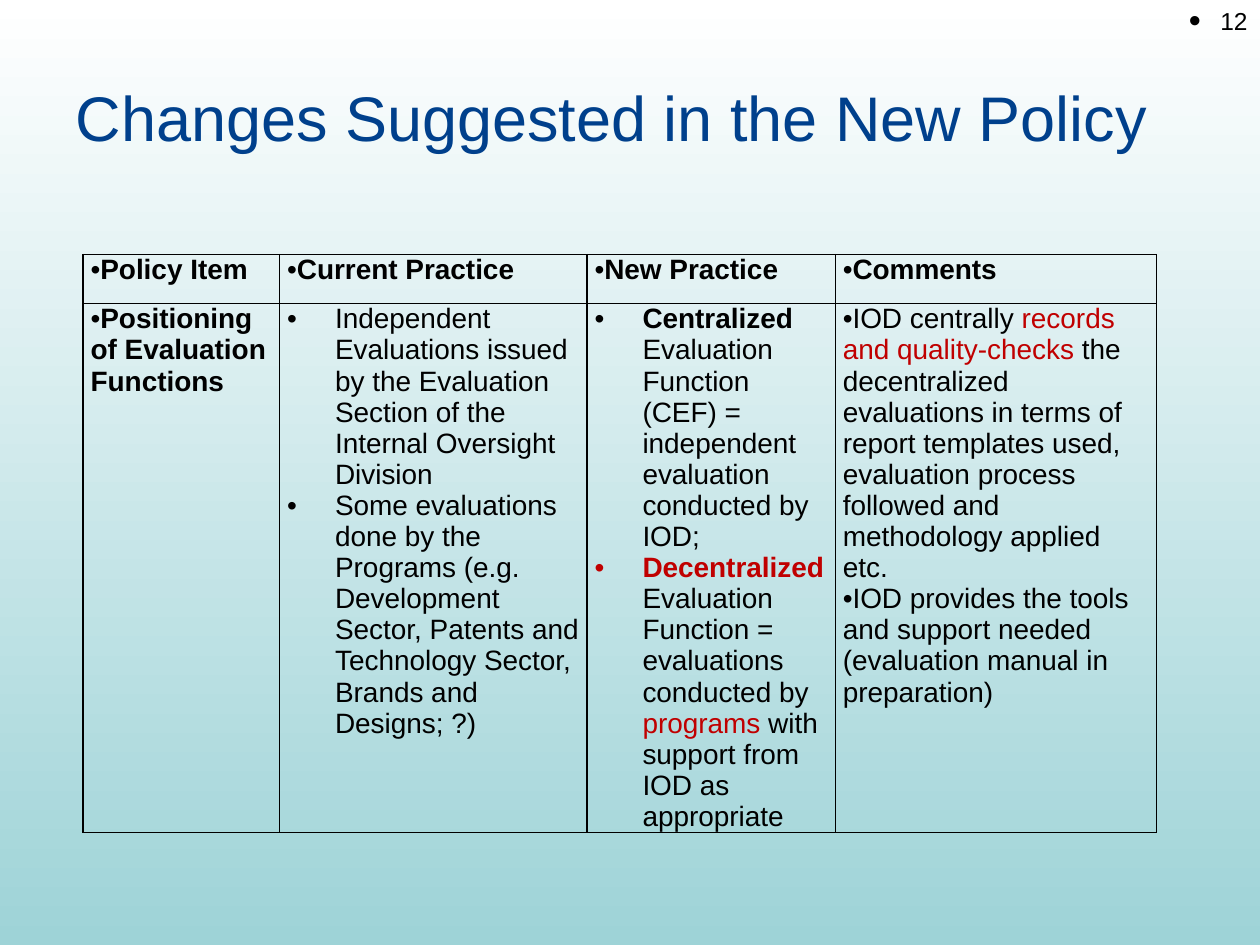
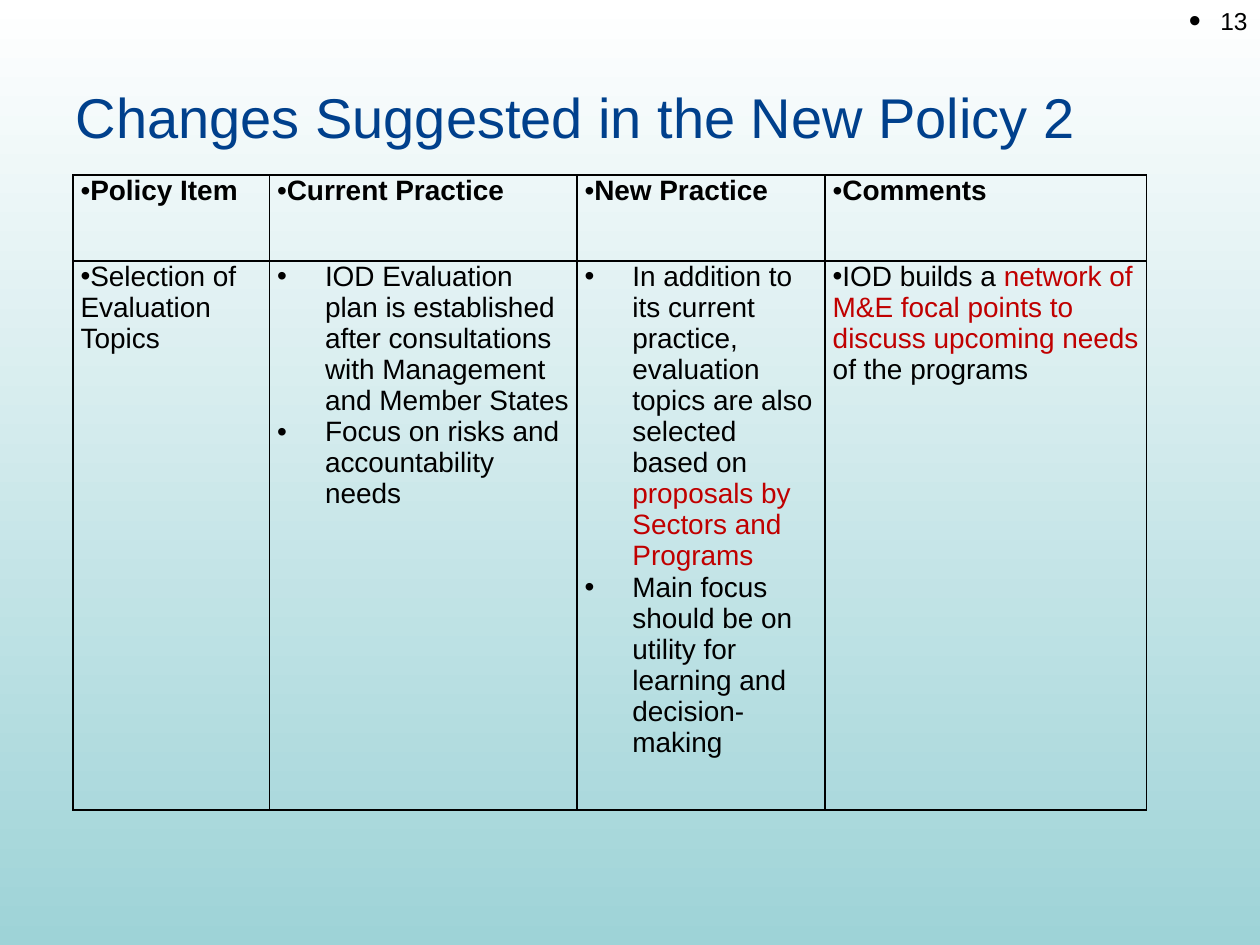
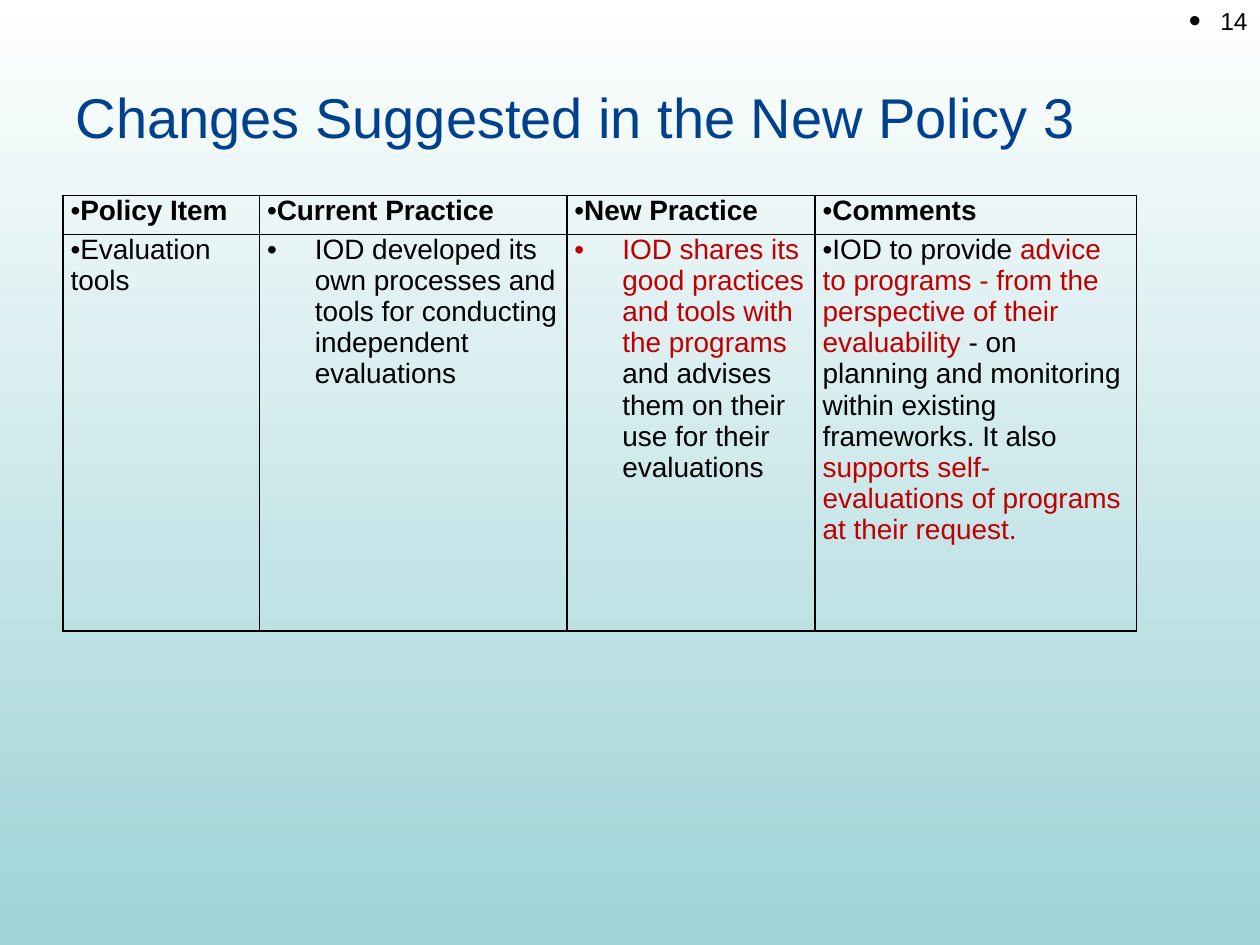
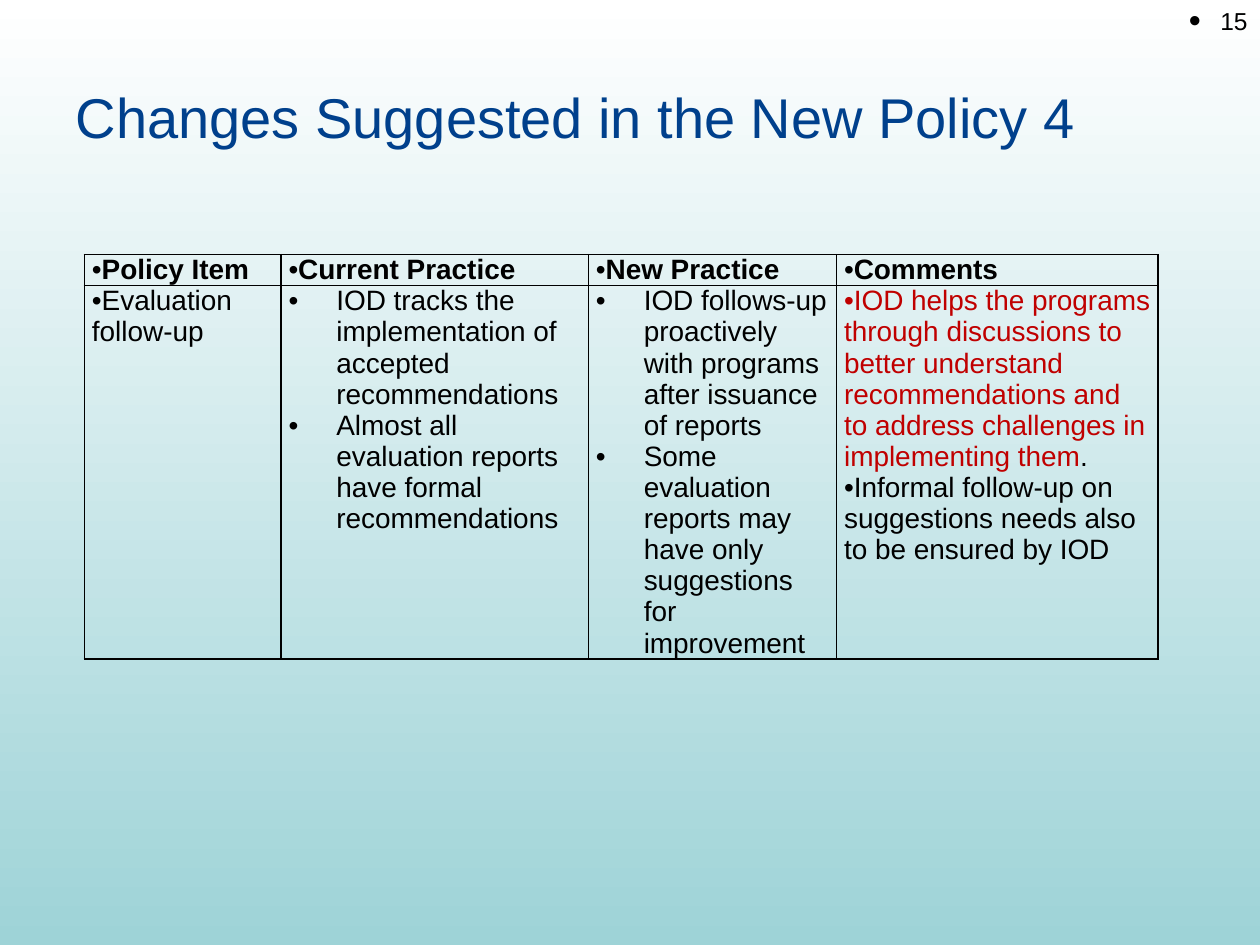
from dataclasses import dataclass

from lxml import etree
from pptx import Presentation
from pptx import util as u
from pptx.dml.color import RGBColor
from pptx.enum import text
from pptx.oxml import ns

# Content: a paragraph is a string or a list of (words, style) pairs
HEADINGS = ["Policy Item", "Current Practice", "New Practice", "Comments"]
FIRST_NUMBER = 12
PAGES = [
    dict(
        title="Changes Suggested in the New Policy", title_size=36,
        left=0.66, top=2.02, height=4.93, rows=(0.39, 1.98),
        cells=[
            [[("Positioning of Evaluation Functions", "strong")]],
            ["Independent Evaluations issued by the Evaluation Section of the "
             "Internal Oversight Division",
             "Some evaluations done by the Programs (e.g. Development Sector, "
             "Patents and Technology Sector, Brands and Designs; ?)"],
            [[("Centralized", "strong"),
              (" Evaluation Function (CEF) = independent evaluation conducted by IOD;", "plain")],
             [("Decentralized ", "strong accent"),
              ("Evaluation Function = evaluations conducted by ", "plain"),
              ("programs", "accent"),
              (" with support from IOD as appropriate", "plain")]],
            [[("IOD centrally ", "plain"),
              ("records and quality-checks ", "accent"),
              ("the decentralized evaluations in terms of report templates used, "
               "evaluation process followed and methodology applied etc.", "plain")],
             "IOD provides the tools and support needed (evaluation manual in preparation)"],
        ],
    ),
    dict(
        title="Changes Suggested in the New Policy 2", title_size=32,
        left=0.58, top=1.39, height=5.04, rows=(0.68, 4.36),
        cells=[
            ["Selection of Evaluation Topics"],
            ["IOD Evaluation plan is established after consultations with "
             "Management and Member States",
             "Focus on risks and accountability needs"],
            [[("In addition to its current practice, evaluation topics are also "
               "selected based on ", "plain"),
              ("proposals by Sectors and Programs", "accent")],
             "Main focus should be on utility for learning and decision-making"],
            [[("IOD builds a ", "plain"),
              ("network of M&E focal points to discuss upcoming needs", "accent"),
              (" of the programs", "plain")]],
        ],
    ),
    dict(
        title="Changes Suggested in the New Policy 3", title_size=32,
        left=0.5, top=1.55, height=3.46, rows=(0.31, 3.15),
        cells=[
            ["Evaluation tools"],
            ["IOD developed its own processes and tools for conducting "
             "independent evaluations"],
            [[("IOD shares its good practices and tools with the programs ", "accent"),
              ("and advises them on their use for their evaluations", "plain")]],
            [[("IOD to provide ", "plain"),
              ("advice to programs - from the perspective of their evaluability", "accent"),
              (" - on planning and monitoring within existing frameworks. It also ", "plain"),
              ("supports self-evaluations of programs at their request.", "accent")]],
        ],
    ),
    dict(
        title="Changes Suggested in the New Policy 4", title_size=32,
        left=0.67, top=2.02, height=3.47, rows=(0.16, 0.8),
        cells=[
            ["Evaluation follow-up"],
            ["IOD tracks the implementation of accepted recommendations",
             "Almost all evaluation reports have formal recommendations"],
            ["IOD follows-up proactively with programs after issuance of reports",
             "Some evaluation reports may have only suggestions for improvement"],
            [[("IOD helps the programs through discussions to better understand "
               "recommendations and to address challenges in implementing them", "accent"),
              (".", "plain")],
             "Informal follow-up on suggestions needs also to be ensured by IOD"],
        ],
    ),
]


@dataclass(frozen=True)
class Theme:
    font: str = "Arial"
    title: str = "00408C"
    ink: str = "000000"
    accent: str = "C00000"
    backdrop: tuple = ("9ED3D7", "FFFFFF")  # bottom, top
    cell_size: int = 16
    number_size: int = 14
    border: float = 1


THEME = Theme()
COLUMNS = (1.56, 2.44, 1.97, 2.55)
HANGING_COLUMNS = (1, 2)
HANG = 0.38


# Helpers
def set_values(target, values):
    for name, value in values.items():
        setattr(target, name, value)


def place(shape, left, top, width, height):
    box = dict(left=left, top=top, width=width, height=height)
    set_values(shape, {name: u.Inches(value) for name, value in box.items()})


def add_span(para, words, size, color, bold=False):
    span = para.add_run()
    span.text = words
    set_values(span.font, dict(name=THEME.font, size=u.Pt(size), bold=bold, italic=False))
    span.font.color.rgb = RGBColor.from_string(color)


def add_bullet(para, hang=0.0, percent=100):
    props = para._p.get_or_add_pPr()
    props.set("marL", str(u.Inches(hang)))
    props.set("indent", str(-u.Inches(hang)))
    for tag, name, value in (("a:buSzPct", "val", str(percent * 1000)),
                             ("a:buFont", "typeface", THEME.font),
                             ("a:buChar", "char", "•")):
        etree.SubElement(props, ns.qn(tag)).set(name, value)


def add_borders(cell):
    props = cell._tc.get_or_add_tcPr()
    for side in ("a:lnL", "a:lnR", "a:lnT", "a:lnB"):
        line = etree.SubElement(props, ns.qn(side), w=str(u.Pt(THEME.border)))
        fill = etree.SubElement(line, ns.qn("a:solidFill"))
        etree.SubElement(fill, ns.qn("a:srgbClr"), val=THEME.ink)


# Parts of a page
def paint_backdrop(master):
    fill = master.background.fill
    fill.gradient()
    fill.gradient_angle = 90
    for position, (stop, color) in enumerate(zip(fill.gradient_stops, THEME.backdrop)):
        stop.position = position
        stop.color.rgb = RGBColor.from_string(color)


def add_title(page, words, size):
    title = page.shapes.title
    place(title, 0.5, 0.3, 9, 1.25)
    frame = title.text_frame
    set_values(frame, dict(vertical_anchor=text.MSO_ANCHOR.MIDDLE, word_wrap=True,
                           auto_size=text.MSO_AUTO_SIZE.NONE))
    para = frame.paragraphs[0]
    para.alignment = text.PP_ALIGN.LEFT
    add_span(para, words, size, THEME.title)


def add_number(page, number):
    box = page.shapes.add_textbox(*map(u.Inches, (7.67, 0, 2.33, 0.52)))
    box.text_frame.word_wrap = True
    para = box.text_frame.paragraphs[0]
    para.alignment = text.PP_ALIGN.RIGHT
    add_bullet(para, hang=0.25, percent=140)
    add_span(para, str(number), THEME.number_size, THEME.ink)


def fill_cell(cell, paragraphs, hang):
    set_values(cell, dict(margin_left=u.Inches(0.06), margin_right=u.Inches(0.06),
                          margin_top=0, margin_bottom=0))
    add_borders(cell)
    cell.fill.background()
    frame = cell.text_frame
    for index, content in enumerate(paragraphs):
        para = frame.add_paragraph() if index else frame.paragraphs[0]
        para.alignment = text.PP_ALIGN.LEFT
        add_bullet(para, hang)
        spans = [(content, "plain")] if isinstance(content, str) else content
        for words, style in spans:
            color = THEME.accent if "accent" in style else THEME.ink
            add_span(para, words, THEME.cell_size, color, bold="strong" in style)


def add_policy_table(page, left, top, height, rows, cells):
    area = (left, top, sum(COLUMNS), height)
    graphic = page.shapes.add_table(2, len(COLUMNS), *map(u.Inches, area))
    table = graphic.table
    set_values(table, dict(first_row=False, horz_banding=False))
    for row, row_height in zip(table.rows, rows):
        row.height = u.Inches(row_height)
    for index, width in enumerate(COLUMNS):
        table.columns[index].width = u.Inches(width)
        fill_cell(table.cell(0, index), [[(HEADINGS[index], "strong")]], 0)
        fill_cell(table.cell(1, index), cells[index],
                  HANG if index in HANGING_COLUMNS else 0)
    place(graphic, *area)  # the frame allows for rows that grow with their text


def main():
    deck = Presentation()
    set_values(deck, dict(slide_width=u.Inches(10), slide_height=u.Inches(7.5)))
    paint_backdrop(deck.slide_master)
    title_only = deck.slide_layouts.get_by_name("Title Only")
    for number, content in enumerate(PAGES, FIRST_NUMBER):
        page = deck.slides.add_slide(title_only)
        add_title(page, content["title"], content["title_size"])
        add_policy_table(page, *(content[key] for key in
                                 ("left", "top", "height", "rows", "cells")))
        add_number(page, number)
    deck.save("out.pptx")


if __name__ == "__main__":
    main()
